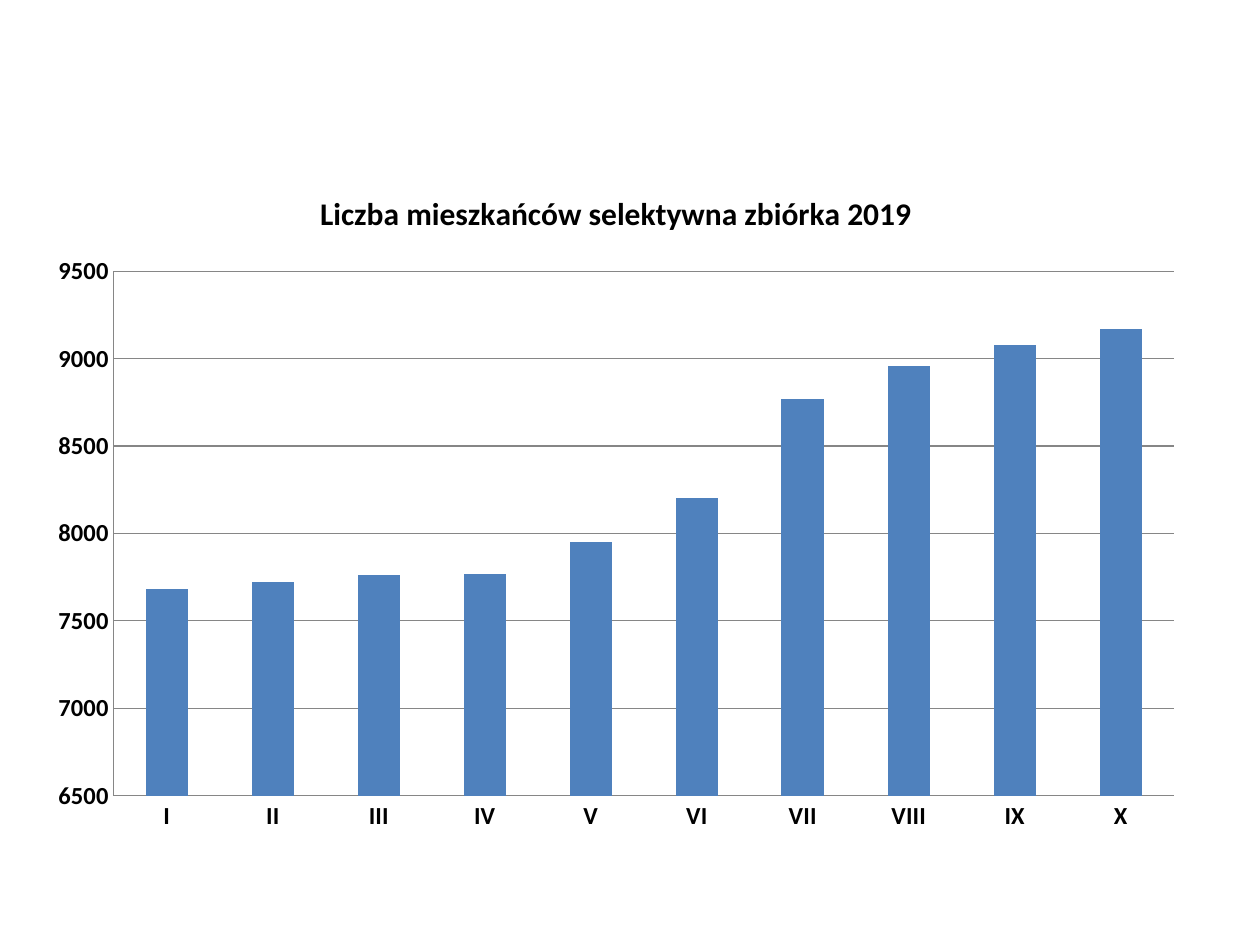
from pptx import Presentation
from pptx.chart.data import CategoryChartData
from pptx.dml.color import RGBColor
from pptx.enum.chart import XL_CHART_TYPE, XL_TICK_MARK
from pptx.util import Pt

COLUMN_CLUSTERED = XL_CHART_TYPE.COLUMN_CLUSTERED
NO_TICKS = XL_TICK_MARK.NONE
BLACK = RGBColor(0x00, 0x00, 0x00)
BLUE = RGBColor(0x4F, 0x81, 0xBD)
GRAY = RGBColor(0x86, 0x86, 0x86)
FONT = "Calibri"

presentation = Presentation()
presentation.slide_width = Pt(720)
presentation.slide_height = Pt(540)
slide = presentation.slides.add_slide(presentation.slide_layouts[6])

residents = CategoryChartData(number_format="General")
residents.categories = ["I", "II", "III", "IV", "V", "VI", "VII", "VIII", "IX", "X"]
residents.add_series(
    "Liczba mieszkańców",
    [7680, 7720, 7760, 7770, 7950, 8200, 8770, 8960, 9080, 9170],
)
chart = slide.shapes.add_chart(
    COLUMN_CLUSTERED, Pt(20), Pt(94.5), Pt(664), Pt(388), residents
).chart
chart.has_legend = False
chart.font.name = FONT
chart.font.size = Pt(10)
chart.font.color.rgb = BLACK

chart.has_title = True
chart.chart_title.include_in_layout = False
title_run = chart.chart_title.text_frame.paragraphs[0].add_run()
title_run.text = "Liczba mieszkańców selektywna zbiórka 2019"
title_run.font.name = FONT
title_run.font.size = Pt(18)
title_run.font.bold = True
title_run.font.color.rgb = BLACK

for axis in (chart.category_axis, chart.value_axis):
    axis.major_tick_mark = NO_TICKS
    axis.minor_tick_mark = NO_TICKS
    axis.format.line.color.rgb = GRAY
    axis.format.line.width = Pt(0.75)
    axis.tick_labels.font.name = FONT
    axis.tick_labels.font.size = Pt(14)
    axis.tick_labels.font.bold = True
    axis.tick_labels.font.color.rgb = BLACK

value_axis = chart.value_axis
value_axis.minimum_scale = 6500
value_axis.maximum_scale = 9500
value_axis.major_unit = 500
value_axis.has_major_gridlines = True
value_axis.major_gridlines.format.line.color.rgb = GRAY
value_axis.major_gridlines.format.line.width = Pt(0.75)

plot = chart.plots[0]
plot.vary_by_categories = False
plot.gap_width = 150
columns = plot.series[0]
columns.invert_if_negative = False
columns.format.fill.solid()
columns.format.fill.fore_color.rgb = BLUE

presentation.save("out.pptx")
